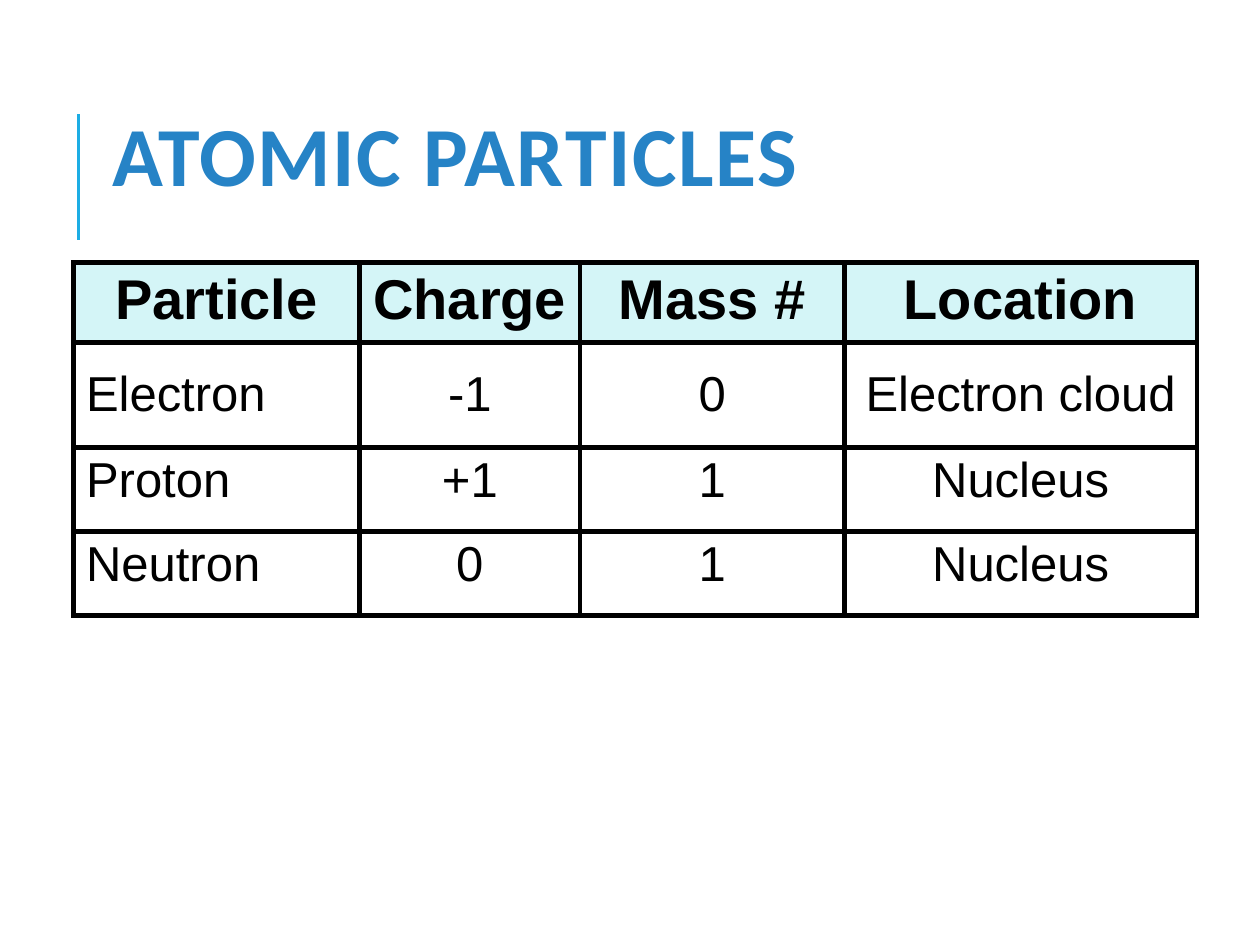
from lxml import etree
from pptx import Presentation
from pptx.dml.color import RGBColor
from pptx.enum import shapes, text
from pptx.oxml import ns
from pptx.util import Pt

BLACK, HEADER_FILL = "000000", "D4F5F7"
COL_WIDTHS = [163.5, 126, 151, 201.5]
ROW_HEIGHTS = [34, 60, 48, 48]
PARTICLES = [
    ["Particle", "Charge", "Mass #", "Location"],
    ["Electron", "-1", "0", "Electron cloud"],
    ["Proton", "+1", "1", "Nucleus"],
    ["Neutron", "0", "1", "Nucleus"],
]


def color(hex_str):
    return RGBColor.from_string(hex_str)


def style(p, font, size, hex_str, bold):
    f = p.font
    f.name, f.size, f.bold = font, Pt(size), bold
    f.color.rgb = color(hex_str)


def add_rule(s, x, y1, y2, hex_str, width):
    line = s.shapes.add_connector(
        shapes.MSO_CONNECTOR.STRAIGHT, Pt(x), Pt(y1), Pt(x), Pt(y2))
    line.line.color.rgb = color(hex_str)
    line.line.width = Pt(width)
    etree.SubElement(line._element.spPr, ns.qn("a:effectLst"))


def add_title(s, title, x, y, w, h):
    tf = s.shapes.add_textbox(Pt(x), Pt(y), Pt(w), Pt(h)).text_frame
    tf.word_wrap = True
    tf.vertical_anchor = text.MSO_ANCHOR.MIDDLE
    p = tf.paragraphs[0]
    r = p.add_run()
    r.text = title
    p.line_spacing = 0.8
    style(p, "Calibri", 48, "2683C6", True)
    # Letter spacing, in hundredths of a point
    r._r.get_or_add_rPr().set("spc", "100")


def set_borders(cell, hex_str, width):
    tc_pr = cell._tc.get_or_add_tcPr()
    for i, side in enumerate(("lnL", "lnR", "lnT", "lnB")):
        ln = etree.Element(ns.qn(f"a:{side}"), w=str(Pt(width)))
        fill = etree.SubElement(ln, ns.qn("a:solidFill"))
        etree.SubElement(fill, ns.qn("a:srgbClr"), val=hex_str)
        tc_pr.insert(i, ln)


def fill_cell(cell, value, row, col):
    header = row == 0
    if header:
        cell.fill.solid()
        cell.fill.fore_color.rgb = color(HEADER_FILL)
    else:
        cell.fill.background()
    set_borders(cell, BLACK, 3)
    # The taller electron row is centred vertically
    cell.vertical_anchor = text.MSO_ANCHOR.MIDDLE if row == 1 else text.MSO_ANCHOR.TOP
    cell.text = value
    p = cell.text_frame.paragraphs[0]
    centred = header or col > 0
    p.alignment = text.PP_ALIGN.CENTER if centred else text.PP_ALIGN.LEFT
    style(p, "Arial", 32 if header else 28, BLACK, header)


def add_particle_table(s, x, y):
    table = s.shapes.add_table(
        len(ROW_HEIGHTS), len(COL_WIDTHS), Pt(x), Pt(y),
        Pt(sum(COL_WIDTHS)), Pt(sum(ROW_HEIGHTS))).table
    table.horz_banding = False
    for column, width in zip(table.columns, COL_WIDTHS):
        column.width = Pt(width)
    for row, height in zip(table.rows, ROW_HEIGHTS):
        row.height = Pt(height)
    for i, values in enumerate(PARTICLES):
        for j, value in enumerate(values):
            fill_cell(table.cell(i, j), value, i, j)


def main():
    prs = Presentation()
    prs.slide_width, prs.slide_height = Pt(720), Pt(540)
    s = prs.slides.add_slide(prs.slide_layouts[6])

    # Heading with its accent rule
    add_rule(s, 44.8, 137, 65, "1CADE4", 1.5)
    add_title(s, "ATOMIC PARTICLES", 57, 72, 612, 42)

    # Particle properties
    add_particle_table(s, 42, 150)

    prs.save("out.pptx")


if __name__ == "__main__":
    main()
